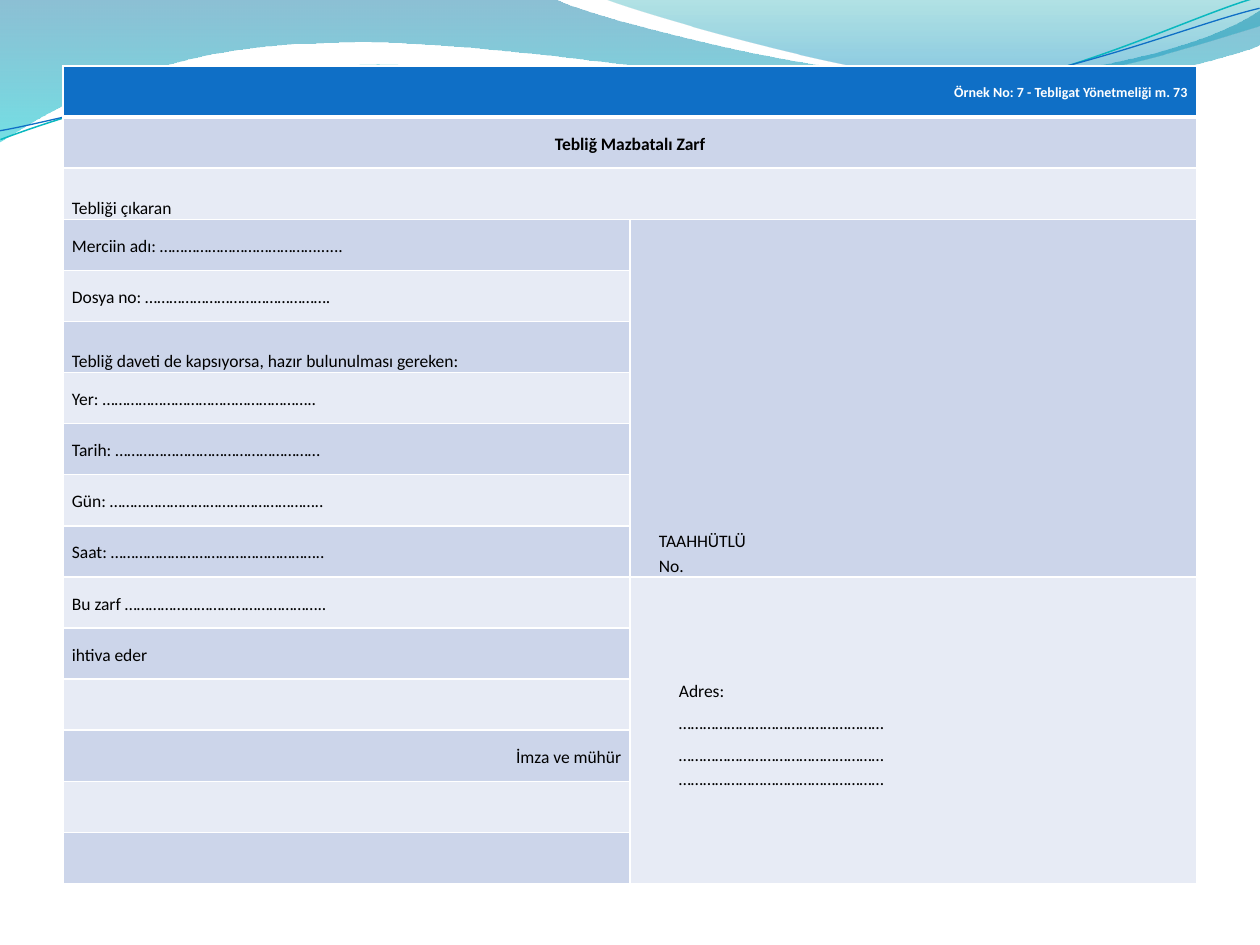
from itertools import chain

from lxml import etree
from pptx import Presentation
from pptx.dml.color import RGBColor
from pptx.enum.text import MSO_ANCHOR, PP_ALIGN
from pptx.oxml.ns import qn
from pptx.util import Pt

EMU_PER_PX = 914400 / 126
FONT = "Calibri"
LEFT, CENTER, RIGHT = PP_ALIGN.LEFT, PP_ALIGN.CENTER, PP_ALIGN.RIGHT
MIDDLE, BOTTOM = MSO_ANCHOR.MIDDLE, MSO_ANCHOR.BOTTOM

TABLE_LEFT, TABLE_TOP, TABLE_WIDTH, TABLE_HEIGHT = 63, 66, 1134, 818
ROW_COUNT, COLUMN_COUNT = 16, 2
HEADER_FILL, ODD_FILL, EVEN_FILL = "0F6FC6", "CCD5EA", "E7EBF5"
MERGES = [((0, 0), (0, 1)), ((1, 0), (1, 1)), ((2, 0), (2, 1)),
          ((3, 1), (9, 1)), ((10, 1), (15, 1))]
ADDRESS_LINE = "……………………………………………"

# (row, column): lines of text and the format values that differ from the default
CELLS = {
    (0, 0): (["Örnek No: 7 - Tebligat Yönetmeliği m. 73"],
             dict(align=RIGHT, size=8, color="FFFFFF", bold=True)),
    (1, 0): (["Tebliğ Mazbatalı Zarf"], dict(align=CENTER, bold=True)),
    (2, 0): (["Tebliği çıkaran"], dict(anchor=BOTTOM)),
    (3, 0): (["Merciin adı: …………………………………......"], {}),
    (4, 0): (["Dosya no: ………………………………………."], {}),
    (5, 0): (["Tebliğ daveti de kapsıyorsa, hazır bulunulması gereken:"],
             dict(anchor=BOTTOM)),
    (6, 0): (["Yer: …………………………………………….."], {}),
    (7, 0): (["Tarih: ……………………………………………"], {}),
    (8, 0): (["Gün: …………………………………………….."], {}),
    (9, 0): (["Saat: …………………………………………….."], {}),
    (10, 0): (["Bu zarf ………………………………………….."], {}),
    (11, 0): (["ihtiva eder"], {}),
    (13, 0): (["İmza ve mühür"], dict(align=RIGHT)),
    (3, 1): (["TAAHHÜTLÜ", "No."], dict(anchor=BOTTOM, indent=20)),
    (10, 1): (["Adres:"] + [ADDRESS_LINE] * 3,
              dict(indent=40, spacing=[1.5, 1.5, 1.5, 1.15])),
}

# Outlines: each step is a list of one point (straight) or three points (Bézier curve)
LEFT_WAVE = [
    [(0, 0)], [(554, -1)],
    [(600, 21), (837, 79), (955, 79)], [(1075, 79), (1207, 47), (1260, 11)],
    [(1261, 45)],
    [(1239, 55), (1096, 96), (940, 94)], [(784, 94), (481, 35), (324, 43)],
    [(161, 45), (58, 105), (-1, 142)], [(0, 0)],
]
RIGHT_WAVE = [
    [(604, -1)], [(641, 14), (859, 78), (969, 82)],
    [(1079, 87), (1211, 40), (1260, 26)], [(1260, 0)], [(604, -1)],
]
CURVE_ROTATION = 357.3
TEAL_CURVE = [
    [(-2, 110)], [(59, 90), (200, 52), (350, 53)],
    [(499, 53), (745, 118), (896, 114)], [(1049, 109), (1184, 45), (1260, 27)],
]
BLUE_CURVE = [
    [(-2, 101)], [(57, 94), (207, 57), (357, 58)],
    [(509, 58), (750, 112), (902, 107)], [(1052, 104), (1187, 52), (1262, 38)],
]


def px(value):
    return round(value * EMU_PER_PX)


def rgb(color):
    return RGBColor.from_string(color)


def add_outline(slide, outline, close):
    """Build a freeform, then join the three points of each curved step."""
    points = [(px(x), px(y)) for x, y in chain.from_iterable(outline)]
    builder = slide.shapes.build_freeform(*points[0])
    builder.add_line_segments(points[1:], close=close)
    shape = builder.convert_to_shape()
    shape.shadow.inherit = False
    segments = iter(list(shape._element.iter(qn("a:lnTo"))))
    for step in outline[1:]:
        first, *others = [next(segments) for _ in step]
        if others:
            first.tag = qn("a:cubicBezTo")
        for segment in others:
            first.append(segment[0])
            segment.getparent().remove(segment)
    return shape


def add_wave(slide, outline, stops):
    """Add a filled wave; each stop is position, colour and opacity in percent."""
    shape = add_outline(slide, outline, close=True)
    shape.line.fill.background()
    shape.fill.gradient()
    shape.fill.gradient_angle = 270
    for stop, (position, color, _) in zip(shape.fill.gradient_stops, stops):
        stop.position = position
        stop.color.rgb = rgb(color)
    for element, (_, _, opacity) in zip(shape._element.spPr.iter(qn("a:srgbClr")), stops):
        etree.SubElement(element, qn("a:alpha"), val=str(opacity * 1000))


def add_curve(slide, outline, color, width):
    shape = add_outline(slide, outline, close=False)
    shape.rotation = CURVE_ROTATION
    shape.fill.background()
    shape.line.color.rgb = rgb(color)
    shape.line.width = Pt(width)


def set_borders(cell, bottom_width):
    properties = cell._tc.get_or_add_tcPr()
    widths = {"lnL": 1, "lnR": 1, "lnT": 1, "lnB": bottom_width}
    for index, (side, width) in enumerate(widths.items()):
        border = etree.Element(qn(f"a:{side}"), w=str(Pt(width)))
        fill = etree.SubElement(border, qn("a:solidFill"))
        etree.SubElement(fill, qn("a:srgbClr"), val="FFFFFF")
        properties.insert(index, border)


def write_cell(cell, lines, align=LEFT, anchor=MIDDLE, size=10, color="000000",
               bold=False, indent=0, spacing=None):
    cell.vertical_anchor = anchor
    cell.text = "\n".join(lines)
    spacing = spacing or [1.15] * len(lines)
    for paragraph, line_spacing in zip(cell.text_frame.paragraphs, spacing):
        paragraph.alignment = align
        paragraph.line_spacing = line_spacing
        if indent:
            paragraph._p.get_or_add_pPr().set("marL", str(px(indent)))
        font = paragraph.runs[0].font
        for name, value in {"name": FONT, "size": Pt(size), "bold": bold}.items():
            setattr(font, name, value)
        font.color.rgb = rgb(color)


def add_form_table(slide):
    frame = slide.shapes.add_table(ROW_COUNT, COLUMN_COUNT, px(TABLE_LEFT), px(TABLE_TOP),
                                   px(TABLE_WIDTH), px(TABLE_HEIGHT))
    table = frame.table
    table.first_row = table.horz_banding = False
    margins = {"margin_left": 9, "margin_right": 9, "margin_top": 0, "margin_bottom": 0}
    for row_index, row in enumerate(table.rows):
        band = ODD_FILL if row_index % 2 else EVEN_FILL
        for cell in row.cells:
            cell.fill.solid()
            cell.fill.fore_color.rgb = rgb(band if row_index else HEADER_FILL)
            set_borders(cell, bottom_width=1 if row_index else 3)
            for name, value in margins.items():
                setattr(cell, name, px(value))
    for first, last in MERGES:
        table.cell(*first).merge(table.cell(*last))
    for position, (lines, formats) in CELLS.items():
        write_cell(table.cell(*position), lines, **formats)


def main():
    presentation = Presentation()
    presentation.slide_width, presentation.slide_height = px(1260), px(945)
    slide = presentation.slides.add_slide(presentation.slide_layouts[6])
    add_wave(slide, LEFT_WAVE, [(0, "0074A1", 45), (1, "00C6CF", 55)])
    add_wave(slide, RIGHT_WAVE, [(0, "00A1A9", 30), (0.8, "008BBF", 45)])
    add_curve(slide, TEAL_CURVE, "0AB8BF", 0.85)
    add_curve(slide, BLUE_CURVE, "0F6FC6", 0.75)
    add_form_table(slide)
    presentation.save("out.pptx")


if __name__ == "__main__":
    main()
